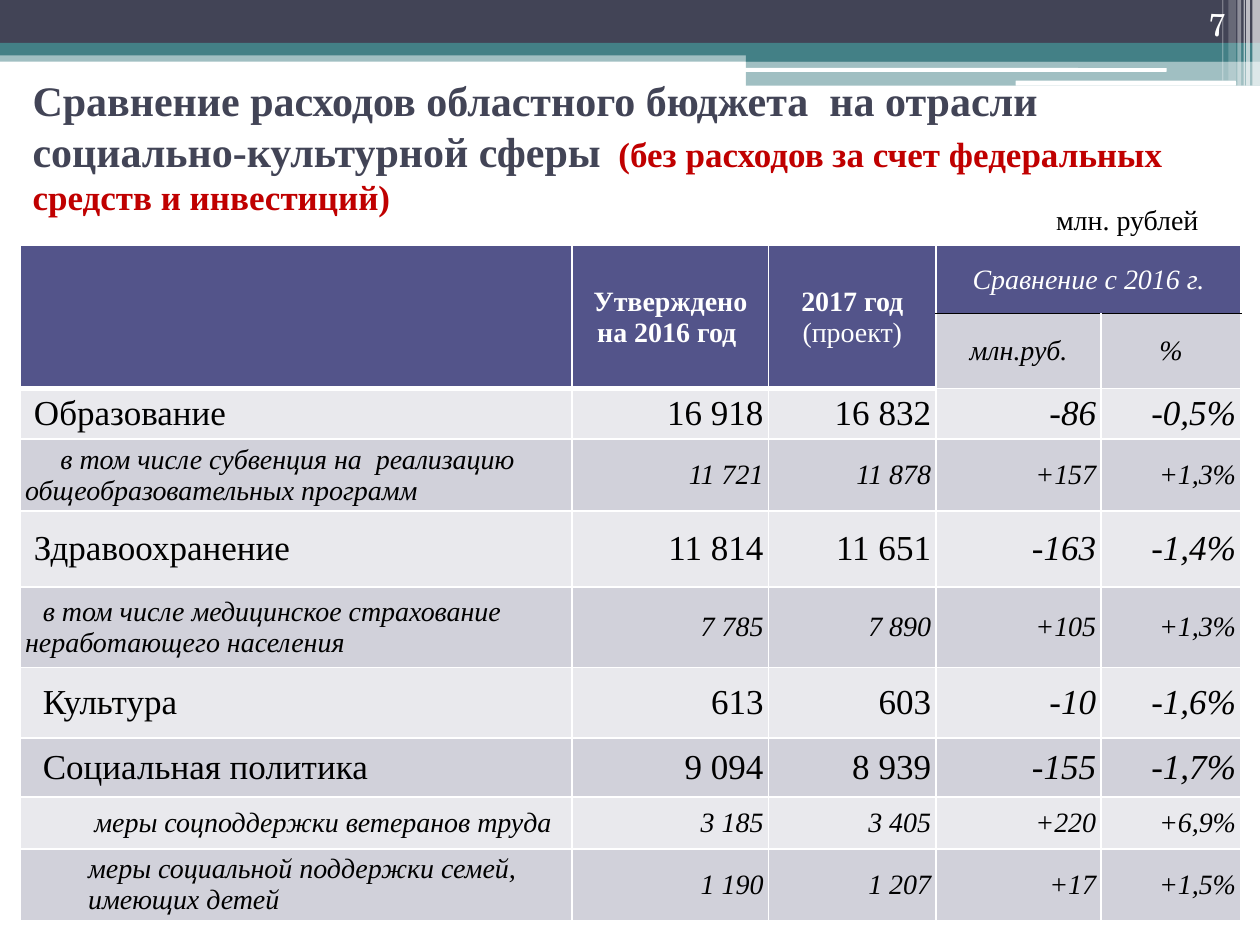
from lxml.etree import SubElement
from pptx import Presentation
from pptx.dml.color import RGBColor
from pptx.enum.shapes import MSO_SHAPE
from pptx.enum.text import MSO_ANCHOR, PP_ALIGN
from pptx.oxml.ns import qn
from pptx.util import Inches, Pt

THEME = dict(
    navy="424456", teal="438086", head="53548A", pale="E9E9ED", gray="D1D1DA",
    red="C00000", white="FFFFFF", black="000000",
    font="Times New Roman", num="TeX Gyre Schola",
    title=24, big=20, small=16, page=18,
)
BARS = [
    (0, 0.4, 10, 0.09, "teal", 50),
    (0, 0, 10, 0.34, "navy", 100),
    (0, 0.34, 10, 0.1, "teal", 100),
    (5.92, 0.39, 4.08, 0.1, "teal", 100),
    (5.92, 0.48, 4.08, 0.2, "teal", 50),
]
PILLS = [(5.91, 0.54, 3.35, 0.03), (8.06, 0.64, 1.75, 0.04)]
STRIPES = [
    (9.94, 0.06, 0.68, 65), (9.89, 0.03, 0.68, 65), (9.87, 0.01, 0.68, 60),
    (9.82, 0.03, 0.68, 40), (9.75, 0.06, 0.64, 20), (9.7, 0.01, 0.64, 30),
]
COLS = [4.38, 1.56, 1.33, 1.31, 1.11]
ROWS = [0.54, 0.59, 0.4, 0.57, 0.6, 0.64, 0.56, 0.47, 0.41, 0.56]
MERGES = [(0, 0, 1, 0), (0, 1, 1, 1), (0, 2, 1, 2), (0, 3, 0, 4)]
HEADS = [
    (0, 1, [("Утверждено на 2016 год ", "b")]),
    (0, 2, [("2017 год", "b"), ("(проект)", "")]),
    (0, 3, [("Сравнение с 2016 г.", "i")]),
    (1, 3, [("млн.руб.", "i")]),
    (1, 4, [("%", "i")]),
]
DATA = [
    ("big", 0.07, 0, ["Образование"], "16 918", "16 832", "-86", "-0,5%"),
    ("small", 0, 0.28, ["в том числе субвенция на  реализацию общеобразовательных программ"],
     "11 721", "11 878", "+157", "+1,3%"),
    ("big", 0.07, 0, ["Здравоохранение"], "11 814", "11 651", "-163", "-1,4%"),
    ("small", 0, 0.14, ["в том числе медицинское страхование неработающего населения"],
     "7 785", "7 890", "+105", "+1,3%"),
    ("big", 0.14, 0, ["Культура"], "613", "603", "-10", "-1,6%"),
    ("big", 0.14, 0, ["Социальная политика"], "9 094", "8 939", "-155", "-1,7%"),
    ("small", 0.55, 0, ["меры соцподдержки ветеранов труда"], "3 185", "3 405", "+220", "+6,9%"),
    ("small", 0.5, 0, ["меры социальной поддержки семей,", "имеющих детей"],
     "1 190", "1 207", "+17", "+1,5%"),
]
TITLE = [
    ("Сравнение расходов областного бюджета  на отрасли социально-культурной сферы",
     "title", "navy"),
    ("  ", "big", "navy"),
    ("(без расходов за счет федеральных средств и инвестиций)", "big", "red"),
]


def tint(name):
    return RGBColor.from_string(THEME[name])


def add_bar(slide, kind, box, color, alpha=100):
    bar = slide.shapes.add_shape(kind, *map(Inches, box))
    bar.shadow.inherit = False
    bar.line.fill.background()
    bar.fill.solid()
    bar.fill.fore_color.rgb = tint(color)
    if alpha < 100:
        node = bar.fill._xPr.find(".//" + qn("a:srgbClr"))
        SubElement(node, qn("a:alpha"), val=str(alpha * 1000))


def add_run(para, text, size, color, style="", font="font"):
    run = para.add_run()
    run.text = text
    face = run.font
    face.name, face.size = THEME[font], Pt(THEME[size])
    face.color.rgb = tint(color)
    face.bold, face.italic = "b" in style, "i" in style


def add_box(slide, box, anchor, align):
    frame = slide.shapes.add_textbox(*map(Inches, box)).text_frame
    frame.word_wrap = True
    frame.vertical_anchor = anchor
    para = frame.paragraphs[0]
    para.alignment = align
    return para


def add_lines(cell, lines, size, color, align, left=0, first=0):
    frame = cell.text_frame
    for n, (text, style) in enumerate(lines):
        para = frame.add_paragraph() if n else frame.paragraphs[0]
        para.alignment = align
        props = para._p.get_or_add_pPr()
        props.set("marL", str(Inches(left)))
        props.set("indent", str(Inches(first)))
        add_run(para, text, size, color, style)


def set_cell(cell, color, pad, edges):
    cell.vertical_anchor = MSO_ANCHOR.MIDDLE
    cell.margin_left = cell.margin_right = Inches(pad)
    cell.margin_top = cell.margin_bottom = Inches(min(pad, 0.05))
    props = cell._tc.get_or_add_tcPr()
    for side in "LRTB":
        shade, width = edges.get(side, ("white", 1))
        line = SubElement(props, qn("a:ln" + side), w=str(Pt(width)))
        fill = SubElement(line, qn("a:solidFill"))
        SubElement(fill, qn("a:srgbClr"), val=THEME[shade])
    cell.fill.solid()
    cell.fill.fore_color.rgb = tint(color)


def add_grid(slide):
    frame = slide.shapes.add_table(len(ROWS), len(COLS), Inches(0.16), Inches(1.95),
                                   Inches(sum(COLS)), Inches(sum(ROWS)))
    table = frame.table
    table.first_row = table.horz_banding = False
    for col, width in zip(table.columns, COLS):
        col.width = Inches(width)
    for row, height in zip(table.rows, ROWS):
        row.height = Inches(height)
    for r in range(len(ROWS)):
        for c in range(len(COLS)):
            edges = {}
            if r < 2:
                color = "gray" if r and c > 2 else "head"
                if c < 3:
                    edges = {"B": ("white", 3)}
                else:
                    edges = {"T" if r else "B": ("black", 1)}
            else:
                color = "gray" if r % 2 else "pale"
            set_cell(table.cell(r, c), color, 0.1 if r < 2 else 0.04, edges)
    for top, left, low, right in MERGES:
        table.cell(top, left).merge(table.cell(low, right))
    for r, c, lines in HEADS:
        add_lines(table.cell(r, c), lines, "small", "black" if r else "white", PP_ALIGN.CENTER)
    for r, (size, left, first, names, *nums) in enumerate(DATA, 2):
        style = "i" if size == "small" else ""
        add_lines(table.cell(r, 0), [(name, style) for name in names], size, "black",
                  PP_ALIGN.LEFT, left, first)
        for c, num in enumerate(nums, 1):
            look = "i" if c > 2 else style
            add_lines(table.cell(r, c), [(num, look)], size, "black", PP_ALIGN.RIGHT)


def main():
    deck = Presentation()
    deck.slide_width, deck.slide_height = Inches(10), Inches(7.5)
    slide = deck.slides.add_slide(deck.slide_layouts[6])
    for *box, color, alpha in BARS:
        add_bar(slide, MSO_SHAPE.RECTANGLE, box, color, alpha)
    for box in PILLS:
        add_bar(slide, MSO_SHAPE.ROUNDED_RECTANGLE, box, "white")
    for left, width, height, alpha in STRIPES:
        add_bar(slide, MSO_SHAPE.RECTANGLE, (left, 0, width, height), "white", alpha)
    add_grid(slide)
    page = add_box(slide, (7.5, 0, 2.33, 0.39), MSO_ANCHOR.BOTTOM, PP_ALIGN.RIGHT)
    add_run(page, "7", "page", "white", font="num")
    title = add_box(slide, (0.16, 0.68, 9.69, 0.96), MSO_ANCHOR.MIDDLE, PP_ALIGN.LEFT)
    for text, size, color in TITLE:
        add_run(title, text, size, color, "b")
    unit = add_box(slide, (7.89, 1.56, 1.72, 0.37), MSO_ANCHOR.TOP, PP_ALIGN.RIGHT)
    add_run(unit, "млн. рублей", "small", "black")
    deck.save("out.pptx")


if __name__ == "__main__":
    main()
